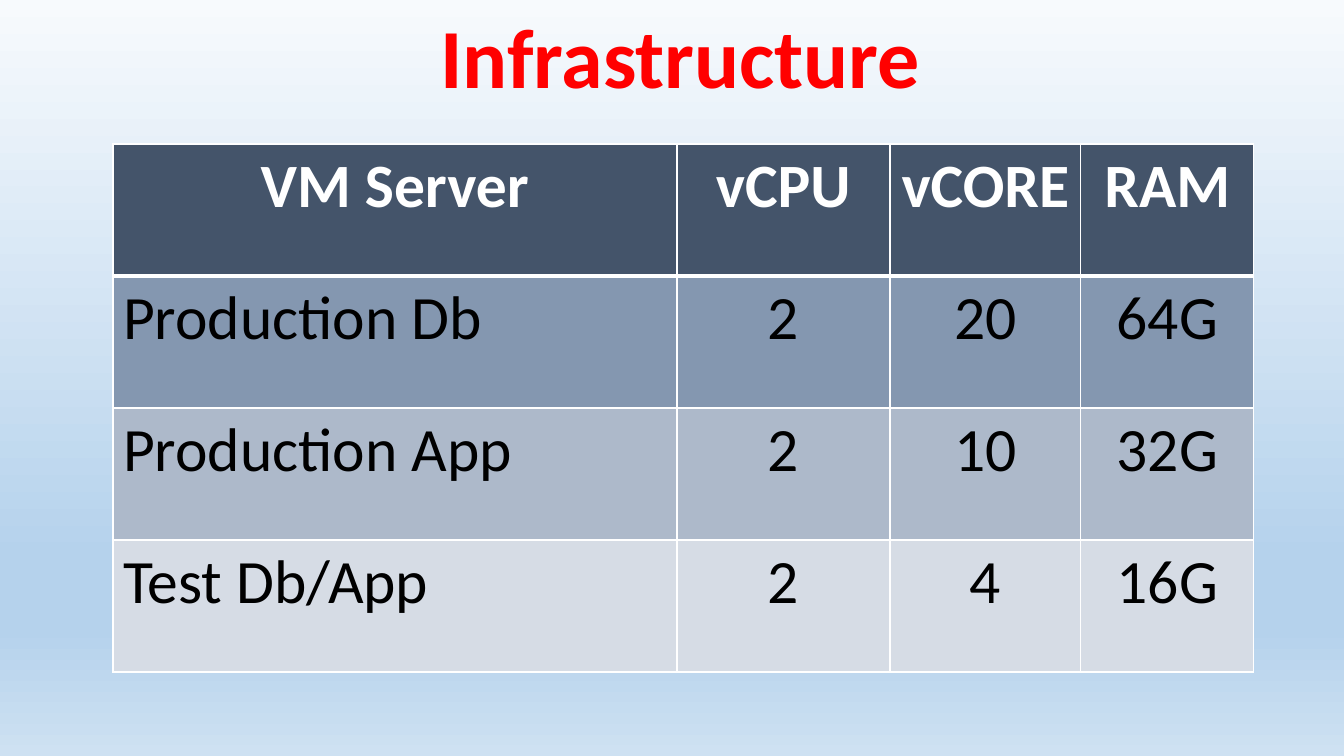
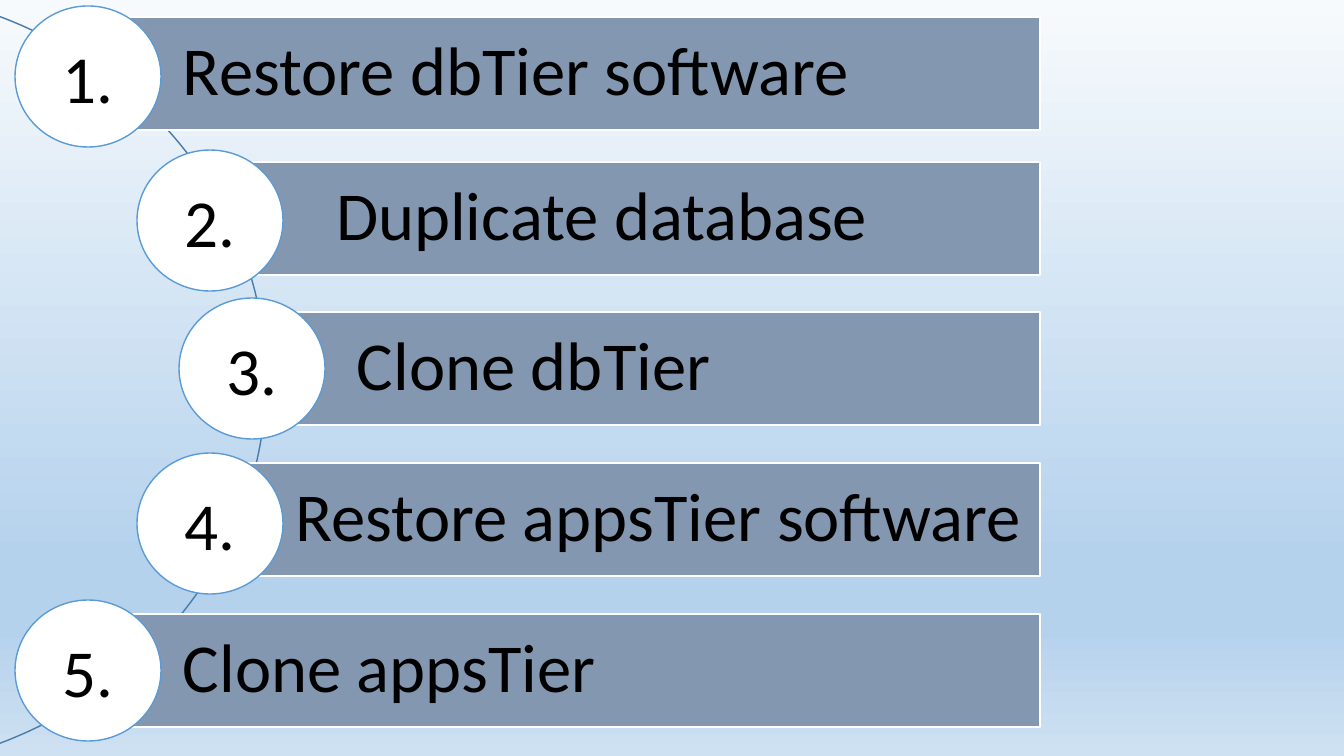
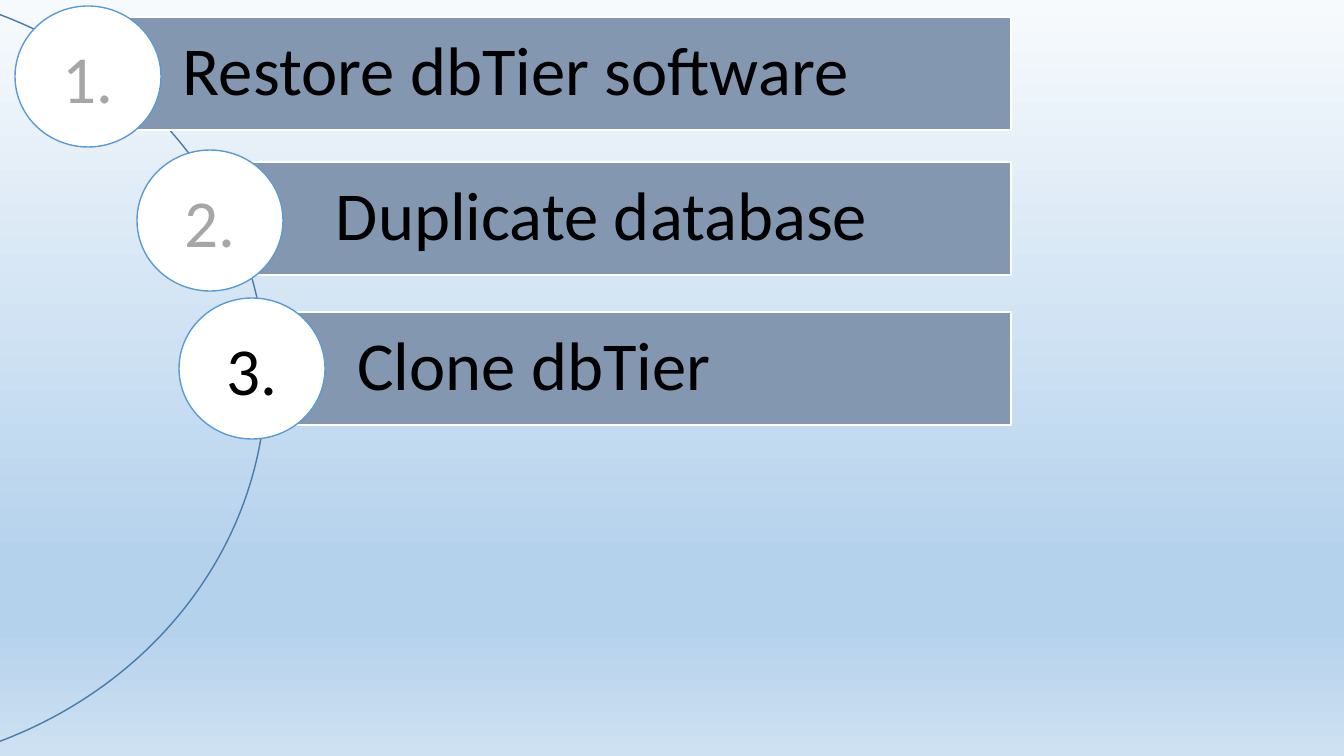
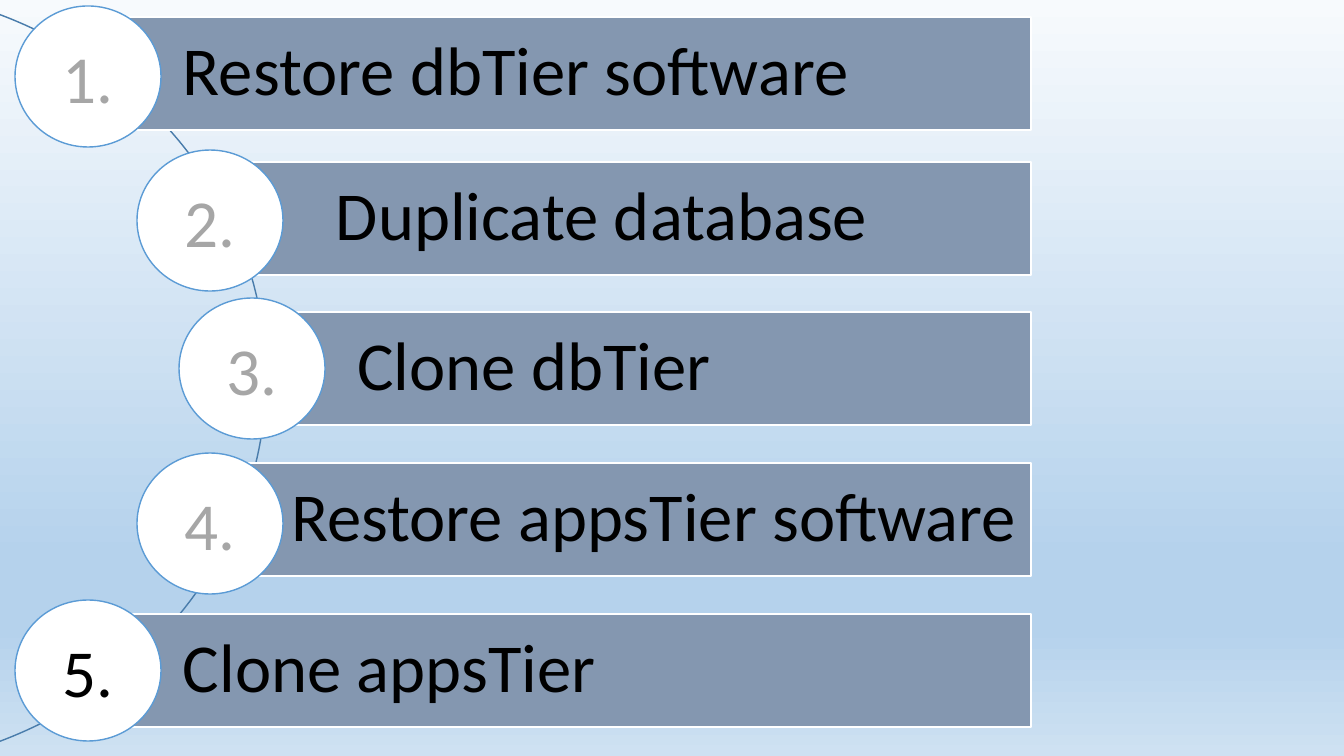
"""Build four slides: the server infrastructure table and the cloning steps."""
from lxml.etree import SubElement
from pptx import Presentation
from pptx.dml.color import RGBColor
from pptx.enum.shapes import MSO_SHAPE
from pptx.enum.text import MSO_ANCHOR, MSO_AUTO_SIZE, PP_ALIGN
from pptx.oxml.ns import qn
from pptx.util import Emu, Pt

PX = 914400 / 100.8
FONT = "Calibri"
RED = RGBColor(0xFF, 0x00, 0x00)
WHITE = RGBColor(0xFF, 0xFF, 0xFF)
BLACK = RGBColor(0x00, 0x00, 0x00)
GREY = RGBColor(0xA6, 0xA6, 0xA6)
NAVY = RGBColor(0x44, 0x54, 0x6A)
SLATE = RGBColor(0x84, 0x97, 0xB0)
MIST = RGBColor(0xAD, 0xB9, 0xCA)
PALE = RGBColor(0xD6, 0xDC, 0xE5)
RING = RGBColor(0x5B, 0x9B, 0xD5)
ARC = RGBColor(0x49, 0x7C, 0xAB)
SKY = [
    (0, RGBColor(0xF7, 0xFA, 0xFD)),
    (74, RGBColor(0xB5, 0xD2, 0xEC)),
    (83, RGBColor(0xB5, 0xD2, 0xEC)),
    (100, RGBColor(0xCE, 0xE1, 0xF2)),
]


def px(*lengths):
    return [Emu(round(length * PX)) for length in lengths]


def write(frame, text, size, color, align=PP_ALIGN.LEFT, bold=False):
    paragraph = frame.paragraphs[0]
    paragraph.alignment = align
    run = paragraph.add_run()
    run.text = text
    run.font.name = FONT
    run.font.size = Pt(size)
    run.font.bold = bold
    run.font.color.rgb = color
    return paragraph


prs = Presentation()
prs.slide_width, prs.slide_height = px(1344, 756)

sky_fill = prs.slide_master.background.fill
sky_fill.gradient()
sky_fill.gradient_angle = 270
sky_stops = prs.slide_master.element.find(".//" + qn("a:gsLst"))
for old_stop in list(sky_stops):
    sky_stops.remove(old_stop)
for position, color in SKY:
    stop = SubElement(sky_stops, qn("a:gs"), pos=str(position * 1000))
    SubElement(stop, qn("a:srgbClr"), val=str(color))

infrastructure = prs.slides.add_slide(prs.slide_layouts[5])
title = infrastructure.shapes.title
title.left, title.top, title.width, title.height = px(430, -1, 506, 112)
title.text_frame.word_wrap = False
title.text_frame.auto_size = MSO_AUTO_SIZE.NONE
title.text_frame.vertical_anchor = MSO_ANCHOR.TOP
write(title.text_frame, "Infrastructure", 60, RED, bold=True)

COLUMN_WIDTHS = [564, 213, 191, 173]
ROW_HEIGHT = 132
SERVERS = [
    (NAVY, ["VM Server", "vCPU", "vCORE", "RAM"]),
    (SLATE, ["Production Db", "2", "20", "64G"]),
    (MIST, ["Production App", "2", "10", "32G"]),
    (PALE, ["Test Db/App", "2", "4", "16G"]),
]
servers = infrastructure.shapes.add_table(
    len(SERVERS), len(COLUMN_WIDTHS),
    *px(113, 144, sum(COLUMN_WIDTHS), ROW_HEIGHT * len(SERVERS))).table
for column, width in zip(servers.columns, px(*COLUMN_WIDTHS)):
    column.width = width
for row_index, (row_color, values) in enumerate(SERVERS):
    servers.rows[row_index].height = px(ROW_HEIGHT)[0]
    is_header = row_index == 0
    for column_index, value in enumerate(values):
        cell = servers.cell(row_index, column_index)
        left_aligned = column_index == 0 and not is_header
        write(cell.text_frame, value, 44, WHITE if is_header else BLACK,
              PP_ALIGN.LEFT if left_aligned else PP_ALIGN.CENTER, is_header)
        thick_side = {0: "a:lnB", 1: "a:lnT"}.get(row_index)
        for side in ("a:lnL", "a:lnR", "a:lnT", "a:lnB"):
            border = SubElement(cell._tc.get_or_add_tcPr(), qn(side),
                                w=str(Pt(3 if side == thick_side else 1)))
            border_fill = SubElement(border, qn("a:solidFill"))
            SubElement(border_fill, qn("a:srgbClr"), val=str(WHITE))
        cell.fill.solid()
        cell.fill.fore_color.rgb = row_color

BAR_HEIGHT = 113
STEPS = [
    ("Restore dbTier software", 78, 17, 105, PP_ALIGN.LEFT, 15, 6),
    ("Duplicate database", 200, 162, 136, PP_ALIGN.LEFT, 137, 150),
    ("Clone dbTier", 221, 312, 136, PP_ALIGN.LEFT, 179, 298),
    ("Restore appsTier software", 200, 463, 90, PP_ALIGN.CENTER, 137, 453),
    ("Clone appsTier", 78, 614, 105, PP_ALIGN.LEFT, 15, 600),
]
PROGRESS = [(5, 1040, -13, 0), (3, 1011, -15, 2), (5, 1031, -15, 4)]

for step_count, bar_right, arc_top, done_count in PROGRESS:
    shapes = prs.slides.add_slide(prs.slide_layouts[6]).shapes
    arc = shapes.add_shape(MSO_SHAPE.BLOCK_ARC, *px(-594, arc_top, 860, 786))
    for index, adjustment in enumerate([174.664, 41.661, 0]):
        arc.adjustments[index] = adjustment
    arc.shadow.inherit = False
    arc.fill.background()
    arc.line.color.rgb = ARC
    arc.line.width = Pt(1)

    for number, step in enumerate(STEPS[:step_count], 1):
        label, bar_left, bar_top, indent, align, badge_left, badge_top = step
        bar = shapes.add_shape(MSO_SHAPE.RECTANGLE, *px(
            bar_left, bar_top, bar_right - bar_left, BAR_HEIGHT))
        badge = shapes.add_shape(MSO_SHAPE.OVAL, *px(badge_left, badge_top, 146, 141))
        for part, fill, line in ((bar, SLATE, WHITE), (badge, WHITE, RING)):
            part.shadow.inherit = False
            part.fill.solid()
            part.fill.fore_color.rgb = fill
            part.line.color.rgb = line
            part.line.width = Pt(1)
            part.text_frame.vertical_anchor = MSO_ANCHOR.MIDDLE
        frame = bar.text_frame
        frame.word_wrap = align == PP_ALIGN.LEFT
        (frame.margin_left, frame.margin_top,
         frame.margin_right, frame.margin_bottom) = px(indent, 14, 14, 14)
        write(frame, label, 49, BLACK, align).line_spacing = 0.9
        write(badge.text_frame, f"{number}.", 48,
              GREY if number <= done_count else BLACK, PP_ALIGN.CENTER)

prs.save("out.pptx")
